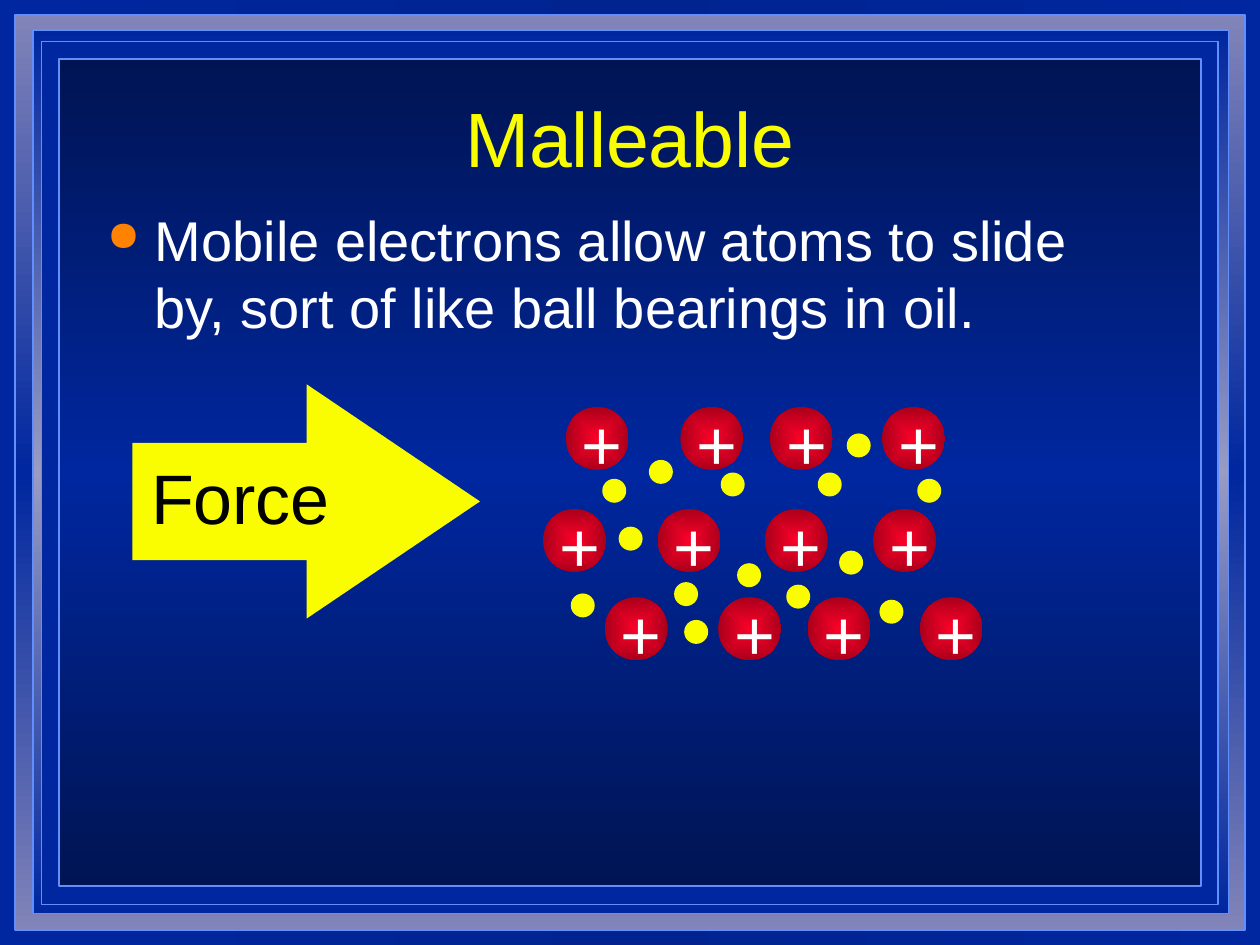
import pptx
import pptx.dml.color
import pptx.enum.shapes
import pptx.enum.text
import pptx.oxml
import pptx.oxml.ns
import pptx.util

Inches = pptx.util.Inches
Pt = pptx.util.Pt
SHAPE = pptx.enum.shapes.MSO_SHAPE
ALIGN = pptx.enum.text.PP_ALIGN
ANCHOR = pptx.enum.text.MSO_ANCHOR

COLORS = {
    "blue": "00279F",
    "frame": "618FFD",
    "yellow": "FAFD00",
    "red": "FC0128",
    "orange": "FF8203",
    "white": "FFFFFF",
    "black": "000000",
}
LINEAR = '<a:lin ang="{}" scaled="1"/>'
VERTICAL = LINEAR.format(5400000)
HORIZONTAL = LINEAR.format(0)
FROM_CENTER = ('<a:path path="shape"><a:fillToRect l="50000" t="50000" '
               'r="50000" b="50000"/></a:path>')

PLAIN = ""
DARK_BLUE = '<a:shade val="22500"/>'
DIM_BLUE = '<a:shade val="80000"/>'
DARK_RED = '<a:shade val="40800"/>'
PALE = '<a:tint val="78800"/>'
PALER = '<a:tint val="69000"/>'

ATOM_SIZE = 0.5
ELECTRON_SIZE = 0.19
ATOM_ROWS = {
    3.23: (4.49, 5.4, 6.11, 7),
    4.04: (4.31, 5.22, 6.07, 6.93),
    4.74: (4.8, 5.7, 6.41, 7.3),
}
ELECTRONS = (
    (6.49, 3.75), (5.15, 3.65), (4.53, 4.71), (4.91, 4.18), (5.72, 3.75),
    (5.43, 4.92), (6.98, 4.76), (5.85, 4.47), (6.24, 4.64), (6.66, 4.37),
    (7.28, 3.8), (6.72, 3.44), (4.78, 3.8), (5.35, 4.62),
)


def rgb(name):
    return pptx.dml.color.RGBColor.from_string(COLORS[name])


def xml(markup):
    """Parse one drawing element, adding the a: namespace to its root tag."""
    tag, rest = markup[:-2].split(" ", 1) if markup.endswith("/>") else (markup[:-1].split(">", 1)[0], "")
    namespace = " " + pptx.oxml.ns.nsdecls("a")
    if markup.endswith("/>"):
        return pptx.oxml.parse_xml(f"{tag}{namespace} {rest}/>")
    return pptx.oxml.parse_xml(markup.replace(tag, tag + namespace, 1))


class SlideBuilder:
    """Holds the text font and the slide being filled."""

    def __init__(self, slide, font="Arial"):
        self.slide = slide
        self.font = font

    def gradient(self, owner, fill, color, changes, direction):
        """Spread evenly spaced shades or tints of one colour over a fill."""
        fill.gradient()
        grad = owner.find(".//" + pptx.oxml.ns.qn("a:gradFill"))
        for child in list(grad):
            grad.remove(child)
        step = 100000 // (len(changes) - 1)
        stops = "".join(
            f'<a:gs pos="{i * step}"><a:srgbClr val="{COLORS[color]}">{change}</a:srgbClr></a:gs>'
            for i, change in enumerate(changes))
        holder = xml(f"<a:gradFill><a:gsLst>{stops}</a:gsLst>{direction}</a:gradFill>")
        for child in list(holder):
            grad.append(child)

    def background(self, color, changes):
        self.gradient(self.slide._element, self.slide.background.fill,
                      color, changes, HORIZONTAL)

    def shape(self, preset, box, color, changes=None, direction=VERTICAL,
              line=None, parent=None):
        shapes = (parent or self.slide).shapes
        item = shapes.add_shape(preset, *map(Inches, box))
        item.shadow.inherit = False
        if changes:
            self.gradient(item._element, item.fill, color, changes, direction)
        else:
            item.fill.solid()
            item.fill.fore_color.rgb = rgb(color)
        if line:
            item.line.color.rgb = rgb(line)
            item.line.width = Pt(1)
        else:
            item.line.fill.background()
        return item

    def text(self, box, words, size, color, align=ALIGN.LEFT,
             anchor=ANCHOR.TOP, before=0, parent=None):
        """Add a wrapped text box; before is a percentage of the line."""
        shapes = (parent or self.slide).shapes
        frame = shapes.add_textbox(*map(Inches, box)).text_frame
        frame.word_wrap = True
        frame.vertical_anchor = anchor
        paragraph = frame.paragraphs[0]
        paragraph.alignment = align
        if before:
            paragraph._p.get_or_add_pPr().append(xml(
                f'<a:spcBef><a:spcPct val="{before * 1000}"/></a:spcBef>'))
        run = paragraph.add_run()
        run.text = words
        run.font.name = self.font
        run.font.size = Pt(size)
        run.font.color.rgb = rgb(color)
        return paragraph

    def bullet(self, paragraph, color, indent):
        properties = paragraph._p.get_or_add_pPr()
        properties.set("marL", str(Inches(indent)))
        properties.set("indent", str(-Inches(indent)))
        for markup in (
            f'<a:buClr><a:srgbClr val="{COLORS[color]}"/></a:buClr>',
            '<a:buSzPct val="75000"/>',
            '<a:buChar char="●"/>',
        ):
            properties.append(xml(markup))

    def atom(self, left, top):
        group = self.slide.shapes.add_group_shape()
        self.shape(SHAPE.OVAL, (left, top, ATOM_SIZE, ATOM_SIZE), "red",
                   (PLAIN, DARK_RED), FROM_CENTER, parent=group)
        self.text((left + 0.03, top - 0.1, 0.33, 0.77), "+", 40, "white",
                  before=50, parent=group)

    def electron(self, left, top):
        self.shape(SHAPE.OVAL, (left, top, ELECTRON_SIZE, ELECTRON_SIZE), "yellow")


def main():
    deck = pptx.Presentation()
    deck.slide_width, deck.slide_height = Inches(10), Inches(7.5)
    builder = SlideBuilder(deck.slides.add_slide(deck.slide_layouts[6]))

    builder.background("blue", (PLAIN, DIM_BLUE, PLAIN))
    for box, changes in (
        ((0.12, 0.12, 9.76, 7.26), (PALE, PLAIN, PALE)),
        ((0.26, 0.24, 9.49, 7.01), (PLAIN, PALER, PLAIN)),
        ((0.33, 0.33, 9.34, 6.85), None),
        ((0.47, 0.47, 9.06, 6.56), (DARK_BLUE, PLAIN, DARK_BLUE)),
    ):
        builder.shape(SHAPE.RECTANGLE, box, "blue", changes, line="frame")

    builder.text((0.75, 0.67, 8.5, 0.83), "Malleable", 44, "yellow",
                 ALIGN.CENTER, ANCHOR.MIDDLE)
    for top, lefts in ATOM_ROWS.items():
        for left in lefts:
            builder.atom(left, top)
    for left, top in ELECTRONS:
        builder.electron(left, top)

    force_arrow = builder.shape(SHAPE.RIGHT_ARROW, (1.05, 3.05, 2.76, 1.86), "yellow")
    force_arrow.adjustments[1] = 0.74
    explanation = builder.text(
        (0.75, 1.58, 8.5, 5.08),
        "Mobile electrons allow atoms to slide by, sort of like ball bearings in oil.",
        32, "white", before=20)
    builder.bullet(explanation, "orange", 0.38)
    builder.text((1.1, 3.56, 1.99, 0.77), "Force", 40, "black", before=50)

    deck.save("out.pptx")


if __name__ == "__main__":
    main()
